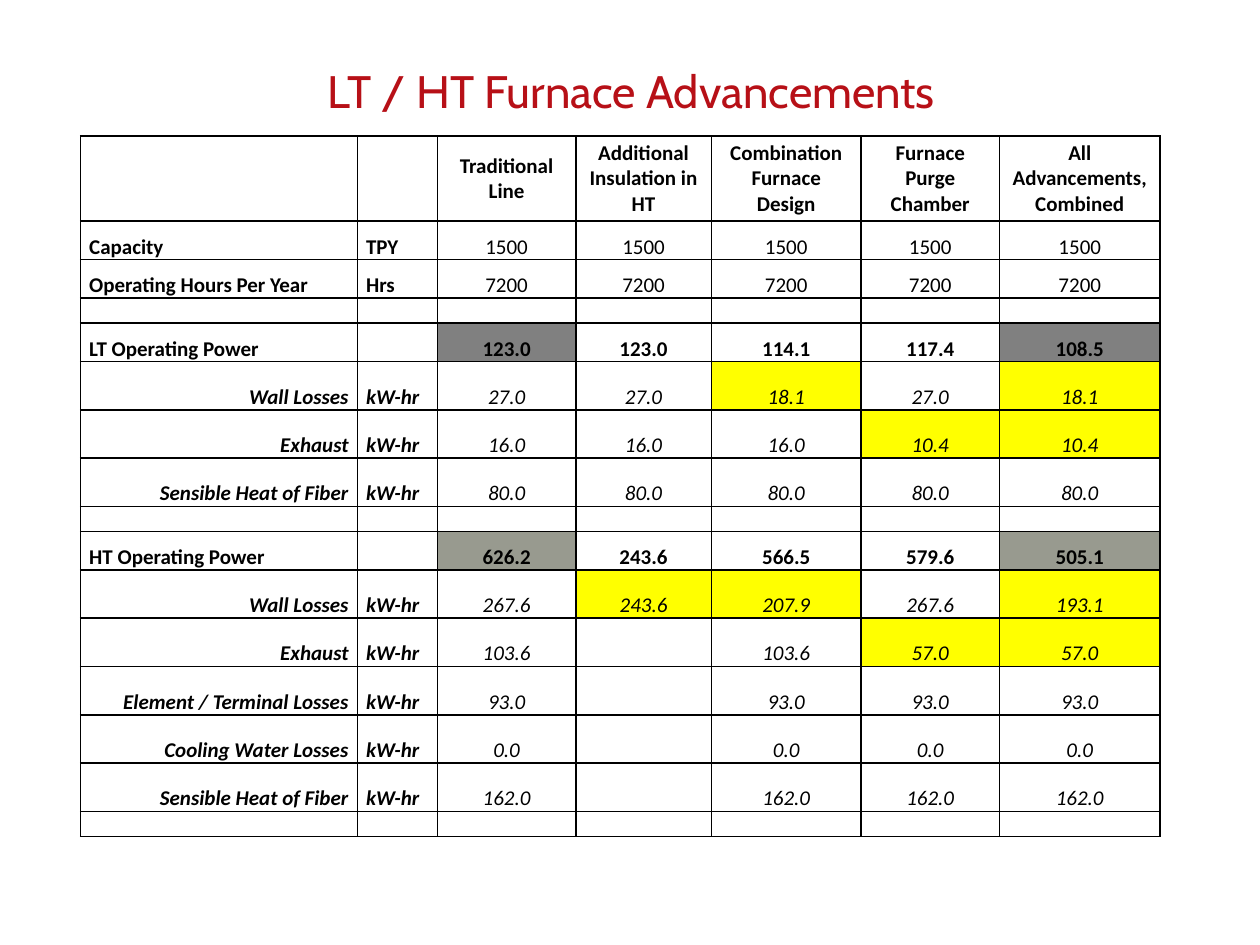
import pptx
import pptx.util
import pptx.dml.color
import pptx.enum.text
import pptx.oxml.ns
from lxml import etree

Pt = pptx.util.Pt
Align = pptx.enum.text.PP_ALIGN
Anchor = pptx.enum.text.MSO_ANCHOR
qn = pptx.oxml.ns.qn

# Content: row kind, label, unit, values, fill colour, filled columns
TITLE = "LT / HT Furnace Advancements"
YELLOW, GRAY, WARM_GRAY = "FFFF00", "808080", "989A8F"
KWH = "kW-hr"
SPACER = ("spacer", "", "", [""] * 5, None, ())
ROWS = [
    ("header", "", "", ["Traditional Line", "Additional Insulation in HT", "Combination Furnace Design",
                        "Furnace Purge Chamber", "All Advancements, Combined"], None, ()),
    ("basis", "Capacity", "TPY", ["1500"] * 5, None, ()),
    ("basis", "Operating Hours Per Year", "Hrs", ["7200"] * 5, None, ()),
    SPACER,
    ("total", "LT Operating Power", "", ["123.0", "123.0", "114.1", "117.4", "108.5"], GRAY, (2, 6)),
    ("detail", "Wall Losses", KWH, ["27.0", "27.0", "18.1", "27.0", "18.1"], YELLOW, (4, 6)),
    ("detail", "Exhaust", KWH, ["16.0", "16.0", "16.0", "10.4", "10.4"], YELLOW, (5, 6)),
    ("detail", "Sensible Heat of Fiber", KWH, ["80.0"] * 5, None, ()),
    SPACER,
    ("total", "HT Operating Power", "", ["626.2", "243.6", "566.5", "579.6", "505.1"], WARM_GRAY, (2, 6)),
    ("detail", "Wall Losses", KWH, ["267.6", "243.6", "207.9", "267.6", "193.1"], YELLOW, (3, 4, 6)),
    ("detail", "Exhaust", KWH, ["103.6", "", "103.6", "57.0", "57.0"], YELLOW, (5, 6)),
    ("detail", "Element / Terminal Losses", KWH, ["93.0", "", "93.0", "93.0", "93.0"], None, ()),
    ("detail", "Cooling Water Losses", KWH, ["0.0", "", "0.0", "0.0", "0.0"], None, ()),
    ("detail", "Sensible Heat of Fiber", KWH, ["162.0", "", "162.0", "162.0", "162.0"], None, ()),
    SPACER,
]
COLUMN_WIDTHS = [158.2, 45.8, 79.1, 77.4, 85.7, 78.9, 92]
ROW_HEIGHTS = {"header": 48.6, "basis": 22, "total": 22, "detail": 27.6, "spacer": 14.3}


def color(value):
    return pptx.dml.color.RGBColor.from_string(value)


def style(paragraph, name, size, ink, bold=False, italic=False):
    font = paragraph.font
    font.name, font.size, font.bold, font.italic = name, Pt(size), bold, italic
    font.color.rgb = color(ink)


def add_borders(cell):
    properties = cell._tc.get_or_add_tcPr()
    for side in ("a:lnL", "a:lnR", "a:lnT", "a:lnB"):
        line = etree.SubElement(properties, qn(side), w=str(int(Pt(1))))
        fill = etree.SubElement(line, qn("a:solidFill"))
        etree.SubElement(fill, qn("a:srgbClr"), val="000000")


def fill_cell(cell, text, kind, column, fill):
    add_borders(cell)
    if fill:
        cell.fill.solid()
        cell.fill.fore_color.rgb = color(fill)
    else:
        cell.fill.background()
    cell.margin_left = cell.margin_right = Pt(5)
    cell.margin_top = cell.margin_bottom = 0
    cell.vertical_anchor = Anchor.MIDDLE if kind == "header" else Anchor.BOTTOM
    paragraph = cell.text_frame.paragraphs[0]
    if not text:
        # Keeps empty cells from stretching the thin spacer rows
        etree.SubElement(paragraph._p, qn("a:endParaRPr"), sz="1000")
        return
    paragraph.text = text
    if column >= 2:
        paragraph.alignment = Align.CENTER
    elif column == 0 and kind == "detail":
        paragraph.alignment = Align.RIGHT
    else:
        paragraph.alignment = Align.LEFT
    style(paragraph, "Calibri", 12, "000000",
          bold=column < 2 or kind in ("header", "total"), italic=kind == "detail")


deck = pptx.Presentation()
deck.slide_width, deck.slide_height = Pt(720), Pt(540)
page = deck.slides.add_slide(deck.slide_layouts[6])

# Title
box = page.shapes.add_textbox(Pt(170), Pt(36), Pt(382), Pt(35.3))
box.text_frame.word_wrap = False
heading = box.text_frame.paragraphs[0]
heading.text = TITLE
heading.alignment = Align.CENTER
heading.line_spacing = 0.9
style(heading, "Cabin", 26, "B71017")

# Table
heights = [ROW_HEIGHTS[row[0]] for row in ROWS]
table = page.shapes.add_table(len(ROWS), len(COLUMN_WIDTHS), Pt(46), Pt(77.8),
                              Pt(sum(COLUMN_WIDTHS)), Pt(sum(heights))).table
table.first_row = table.horz_banding = False
for column, width in zip(table.columns, COLUMN_WIDTHS):
    column.width = Pt(width)
for r, (kind, label, unit, values, fill, filled) in enumerate(ROWS):
    table.rows[r].height = Pt(heights[r])
    for c, text in enumerate([label, unit] + values):
        fill_cell(table.cell(r, c), text, kind, c, fill if c in filled else None)

deck.save("out.pptx")
